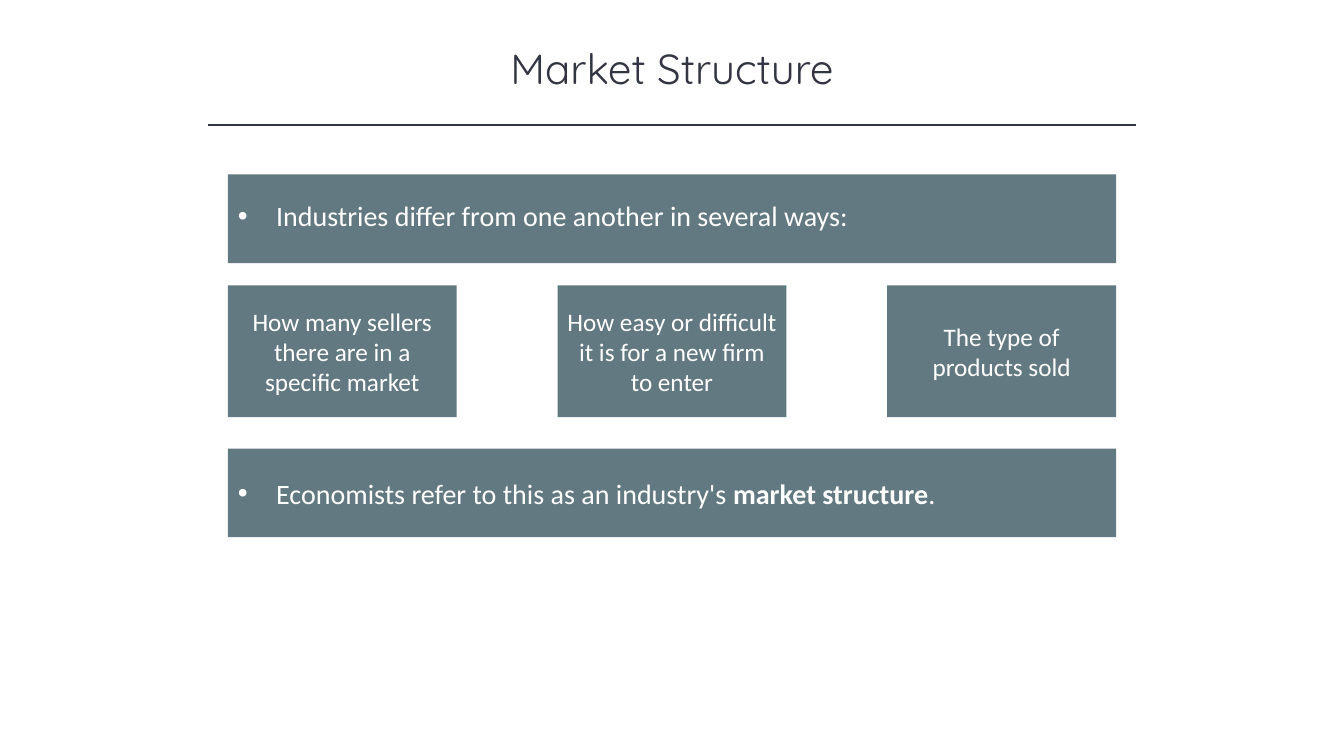
from lxml import etree
from pptx import Presentation
from pptx.dml.color import RGBColor
from pptx.enum.shapes import MSO_CONNECTOR, MSO_SHAPE
from pptx.enum.text import MSO_ANCHOR, PP_ALIGN
from pptx.oxml.ns import qn
from pptx.util import Inches, Pt

RECTANGLE = MSO_SHAPE.RECTANGLE
STRAIGHT = MSO_CONNECTOR.STRAIGHT
MIDDLE = MSO_ANCHOR.MIDDLE
CENTER, LEFT = PP_ALIGN.CENTER, PP_ALIGN.LEFT

INK = RGBColor(0x32, 0x35, 0x42)
SLATE = RGBColor(0x62, 0x79, 0x81)
WHITE = RGBColor(0xFF, 0xFF, 0xFF)

SLIDE_W, SLIDE_H = 13.33, 7.5
GRID_W = 8.81
GRID_X = (SLIDE_W - GRID_W) / 2
BANNER_H = 0.88
CARD_W, CARD_H = 2.27, 1.31
BANNER_ROWS = (1.73, 4.45)
CARD_ROW = 2.83
RULE_Y = 1.24
RULE_OVERHANG = 0.2
INDENT = 0.38

CARDS = (
    "How many sellers there are in a specific market",
    "How easy or difficult it is for a new firm to enter",
    "The type of products sold",
)


def add_run(p, text, size, color, font="Calibri", bold=False):
    r = p.add_run()
    r.text = text
    r.font.name = font
    r.font.size = Pt(size)
    r.font.bold = bold
    r.font.color.rgb = color


def add_title(s, text):
    title = s.shapes.title
    title.left, title.top = Inches((SLIDE_W - 10) / 2), Inches(0.37)
    title.width, title.height = Inches(10), Inches(0.61)
    tf = title.text_frame
    tf.vertical_anchor = MIDDLE
    p = tf.paragraphs[0]
    p.alignment = CENTER
    add_run(p, text, 30, INK, "Quicksand")


def add_rule(s):
    x = GRID_X - RULE_OVERHANG
    line = s.shapes.add_connector(
        STRAIGHT, Inches(x), Inches(RULE_Y), Inches(SLIDE_W - x), Inches(RULE_Y))
    line.line.color.rgb = INK
    line.line.width = Pt(1)
    etree.SubElement(line._element.spPr, qn("a:effectLst"))


def add_box(s, x, y, w, h, alignment):
    sp = s.shapes.add_shape(RECTANGLE, Inches(x), Inches(y), Inches(w), Inches(h))
    sp.shadow.inherit = False
    sp.fill.solid()
    sp.fill.fore_color.rgb = SLATE
    sp.line.fill.background()
    tf = sp.text_frame
    tf.word_wrap = True
    tf.vertical_anchor = MIDDLE
    tf.paragraphs[0].alignment = alignment
    return tf


def add_banner(s, y, runs, bottom_margin=0.05):
    tf = add_box(s, GRID_X, y, GRID_W, BANNER_H, LEFT)
    tf.margin_bottom = Inches(bottom_margin)
    p = tf.paragraphs[0]
    pPr = p._p.get_or_add_pPr()
    pPr.set("marL", str(Inches(INDENT)))
    pPr.set("indent", str(-Inches(INDENT)))
    etree.SubElement(pPr, qn("a:buFont"), typeface="Arial")
    etree.SubElement(pPr, qn("a:buChar"), char="•")
    for text, bold in runs:
        add_run(p, text, 20, WHITE, bold=bold)


def add_cards(s, texts):
    step = (GRID_W - CARD_W) / (len(texts) - 1)
    for i, text in enumerate(texts):
        tf = add_box(s, GRID_X + i * step, CARD_ROW, CARD_W, CARD_H, CENTER)
        add_run(tf.paragraphs[0], text, 18, WHITE)


def main():
    prs = Presentation()
    prs.slide_width, prs.slide_height = Inches(SLIDE_W), Inches(SLIDE_H)
    s = prs.slides.add_slide(prs.slide_layouts[5])
    add_title(s, "Market Structure")
    add_rule(s)
    add_banner(s, BANNER_ROWS[0], [
        ("Industries differ from one another in several ways:", False)], 0.11)
    add_cards(s, CARDS)
    add_banner(s, BANNER_ROWS[1], [
        ("Economists refer to this as an industry's ", False),
        ("market structure", True),
        (".", False)])
    prs.save("out.pptx")


if __name__ == "__main__":
    main()
